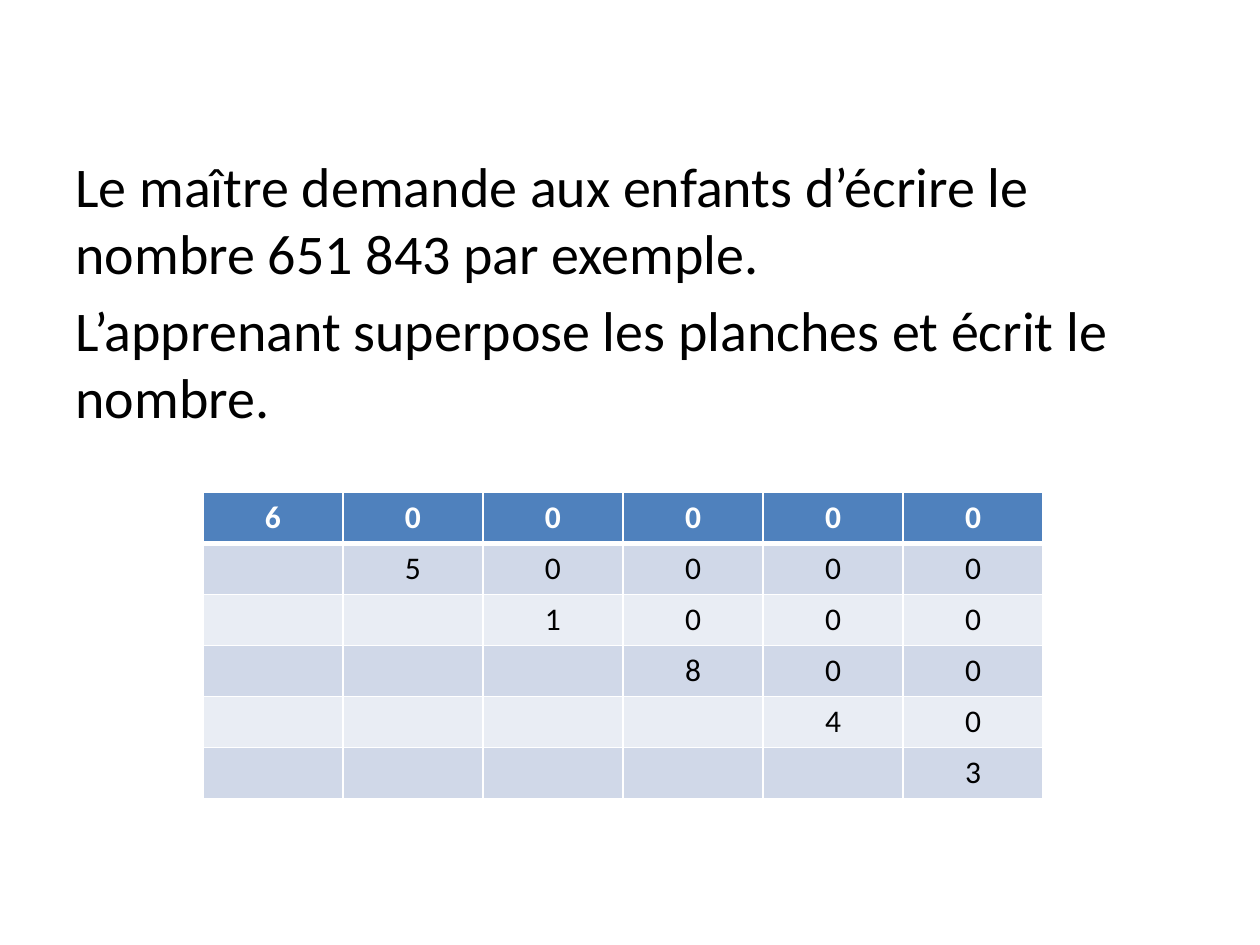
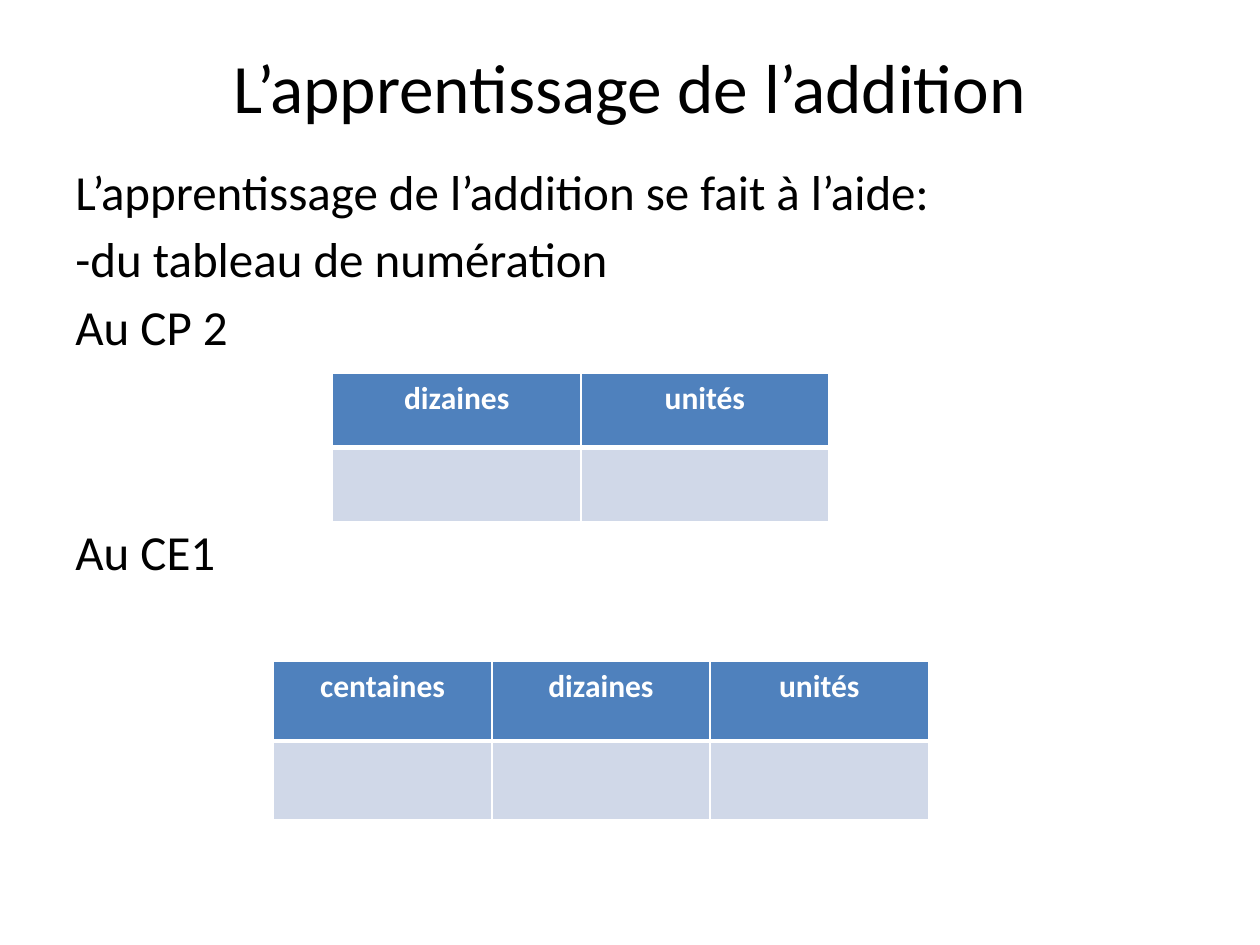
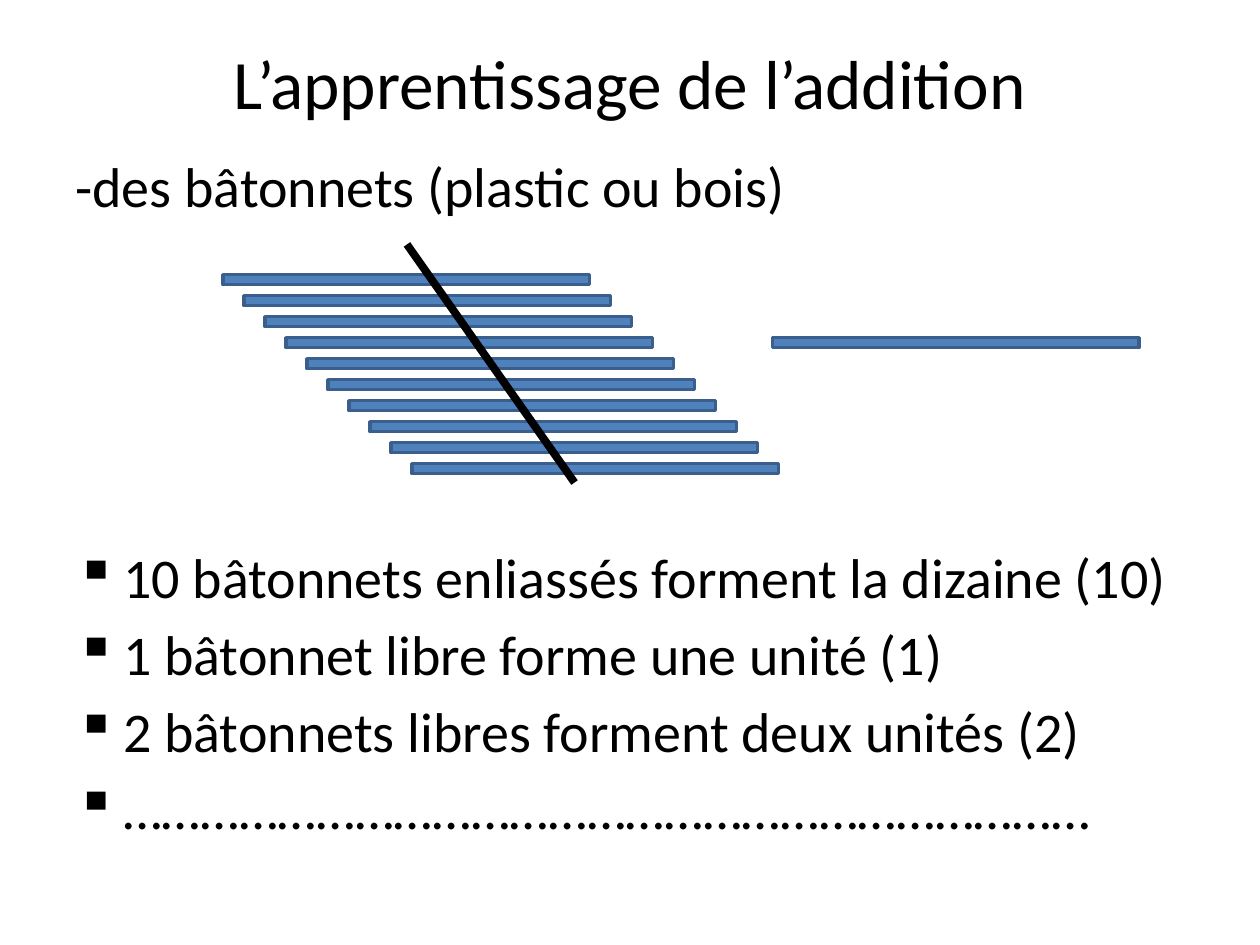
from typing import NamedTuple

from lxml import etree
from pptx import Presentation
from pptx.dml.color import RGBColor
from pptx.enum.shapes import MSO_CONNECTOR, MSO_SHAPE
from pptx.enum.text import MSO_ANCHOR, PP_ALIGN
from pptx.oxml.ns import qn
from pptx.util import Inches, Pt

STRAIGHT = MSO_CONNECTOR.STRAIGHT
RECTANGLE = MSO_SHAPE.RECTANGLE
MIDDLE = MSO_ANCHOR.MIDDLE
CENTER = PP_ALIGN.CENTER

BLACK = RGBColor(0x00, 0x00, 0x00)
WHITE = RGBColor(0xFF, 0xFF, 0xFF)
BLUE = RGBColor(0x4F, 0x81, 0xBD)
DARK_BLUE = RGBColor(0x3A, 0x5F, 0x8C)
ROW_BANDS = (RGBColor(0xD0, 0xD8, 0xE8), RGBColor(0xE9, 0xED, 0xF4))

FONT = "Calibri"
TITLE_SIZE = 39.6
CELL_SIZE = 18
PARAGRAPH_GAP = 0.18  # share of the text size
BULLET_INDENT = Inches(0.38)

SLIDE_WIDTH, SLIDE_HEIGHT = Inches(10), Inches(7.5)
COLUMN, ROW = SLIDE_WIDTH / 100, SLIDE_HEIGHT / 75

ADDITION_TITLE = "L’apprentissage de l’addition"
NUMBER = "651843"


class Area(NamedTuple):
    """A place on the grid, in columns and rows."""
    left: float
    top: float
    width: float
    height: float

    def lengths(self) -> tuple[int, ...]:
        units = (COLUMN, ROW, COLUMN, ROW)
        return tuple(round(value * unit) for value, unit in zip(self, units))


class Line(NamedTuple):
    """One paragraph of the body; before is an extra wide gap in points."""
    text: str
    before: float | None = None
    bullet: bool = False


STICK = Area(17.7, 21.8, 29.1, 0.8)
STICK_STEP = 5 / 3
LOOSE_STICK = STICK._replace(left=61.3, top=STICK.top + 3 * STICK_STEP)
TIE_START, TIE_END = (32.3, 19.4), (45.6, 38.3)


def style_text(paragraph, size: float, color: RGBColor = BLACK, bold: bool = False) -> None:
    font = paragraph.font
    font.name, font.size, font.bold = FONT, Pt(size), bold
    font.color.rgb = color
    for run in paragraph.runs:
        run.font.name, run.font.size, run.font.bold = FONT, Pt(size), bold
        run.font.color.rgb = color


def add_text_frame(slide, area: Area):
    frame = slide.shapes.add_textbox(*area.lengths()).text_frame
    frame.word_wrap = True
    return frame


def add_title(slide, height: float) -> None:
    frame = add_text_frame(slide, Area(5, 3, 90, height))
    frame.vertical_anchor = MIDDLE
    frame.text = ADDITION_TITLE
    frame.paragraphs[0].alignment = CENTER
    style_text(frame.paragraphs[0], TITLE_SIZE)


def add_bullet(paragraph) -> None:
    properties = paragraph._p.get_or_add_pPr()
    properties.set("marL", str(BULLET_INDENT))
    properties.set("indent", str(-BULLET_INDENT))
    etree.SubElement(properties, qn("a:buChar")).set("char", "▪")


def add_body(slide, top: float, size: float, lines: list[Line]) -> None:
    frame = add_text_frame(slide, Area(5, top, 90, 67 - top))
    frame.text = "\n".join(line.text for line in lines)
    for index, (paragraph, line) in enumerate(zip(frame.paragraphs, lines)):
        if line.bullet:
            add_bullet(paragraph)
        if index:
            paragraph.space_before = Pt(line.before or size * PARAGRAPH_GAP)
        style_text(paragraph, size)


def add_borders(cell, row: int) -> None:
    """White rules, thicker between the heading row and the next."""
    widths = {"L": 1, "R": 1, "T": 3 if row == 1 else 1, "B": 3 if row == 0 else 1}
    properties = cell._tc.get_or_add_tcPr()
    for side, width in widths.items():
        rule = etree.SubElement(properties, qn(f"a:ln{side}"), w=str(Pt(width)))
        fill = etree.SubElement(rule, qn("a:solidFill"))
        etree.SubElement(fill, qn("a:srgbClr"), val=str(WHITE))


def add_place_table(slide, area: Area, rows: list[list[str]]) -> None:
    table = slide.shapes.add_table(len(rows), len(rows[0]), *area.lengths()).table
    for row, texts in enumerate(rows):
        is_heading = row == 0
        for column, text in enumerate(texts):
            cell = table.cell(row, column)
            add_borders(cell, row)
            cell.fill.solid()
            cell.fill.fore_color.rgb = BLUE if is_heading else ROW_BANDS[(row - 1) % 2]
            cell.text = text
            paragraph = cell.text_frame.paragraphs[0]
            paragraph.alignment = CENTER
            style_text(paragraph, CELL_SIZE, WHITE if is_heading else BLACK, is_heading)


def add_stick(group, area: Area) -> None:
    stick = group.shapes.add_shape(RECTANGLE, *area.lengths())
    stick.shadow.inherit = False
    stick.fill.solid()
    stick.fill.fore_color.rgb = BLUE
    stick.line.color.rgb = DARK_BLUE
    stick.line.width = Pt(2)


def add_tie(group) -> None:
    """The stroke that binds ten sticks into one bundle."""
    ends = [round(value * unit) for point in (TIE_START, TIE_END)
            for value, unit in zip(point, (COLUMN, ROW))]
    tie = group.shapes.add_connector(STRAIGHT, *ends)
    tie.line.color.rgb = BLACK
    tie.line.width = Pt(4.5)
    etree.SubElement(tie._element.spPr, qn("a:effectLst"))


def build_number_slide(slide) -> None:
    add_body(slide, 11.5, 32, [
        Line("Le maître demande aux enfants d’écrire le nombre 651 843 par exemple."),
        Line("L’apprenant superpose les planches et écrit le nombre."),
    ])
    places = len(NUMBER)
    boards = [[""] * place + [digit] + ["0"] * (places - place - 1)
              for place, digit in enumerate(NUMBER)]
    add_place_table(slide, Area(16.1, 39.1, 66.7, 24.3), boards)


def build_place_value_slide(slide) -> None:
    add_title(slide, 7.7)
    add_body(slide, 12.3, 28, [
        Line("L’apprentissage de l’addition se fait à l’aide:"),
        Line("-du tableau de numération"),
        Line("Au CP 2"),
        Line("Au CE1", before=95),
    ])
    headings = ["centaines", "dizaines", "unités"]
    add_place_table(slide, Area(26.4, 29.6, 39.4, 11.8), [headings[1:], [""] * 2])
    add_place_table(slide, Area(21.7, 52.5, 52, 12.6), [headings, [""] * 3])


def build_sticks_slide(slide) -> None:
    add_title(slide, 6.9)
    add_body(slide, 11.5, 32, [
        Line("-des bâtonnets (plastic ou bois)"),
        Line("10 bâtonnets enliassés forment la dizaine (10)", before=185, bullet=True),
        Line("1 bâtonnet libre forme une unité (1)", bullet=True),
        Line("2 bâtonnets libres forment deux unités (2)", bullet=True),
        Line("…………………………………………………………………", bullet=True),
    ])
    group = slide.shapes.add_group_shape()
    for index in range(10):
        shift = index * STICK_STEP
        add_stick(group, STICK._replace(left=STICK.left + shift, top=STICK.top + shift))
    add_stick(group, LOOSE_STICK)
    add_tie(group)


def main() -> None:
    deck = Presentation()
    deck.slide_width, deck.slide_height = SLIDE_WIDTH, SLIDE_HEIGHT
    blank = deck.slide_layouts[6]
    for build in (build_number_slide, build_place_value_slide, build_sticks_slide):
        build(deck.slides.add_slide(blank))
    deck.save("out.pptx")


if __name__ == "__main__":
    main()
